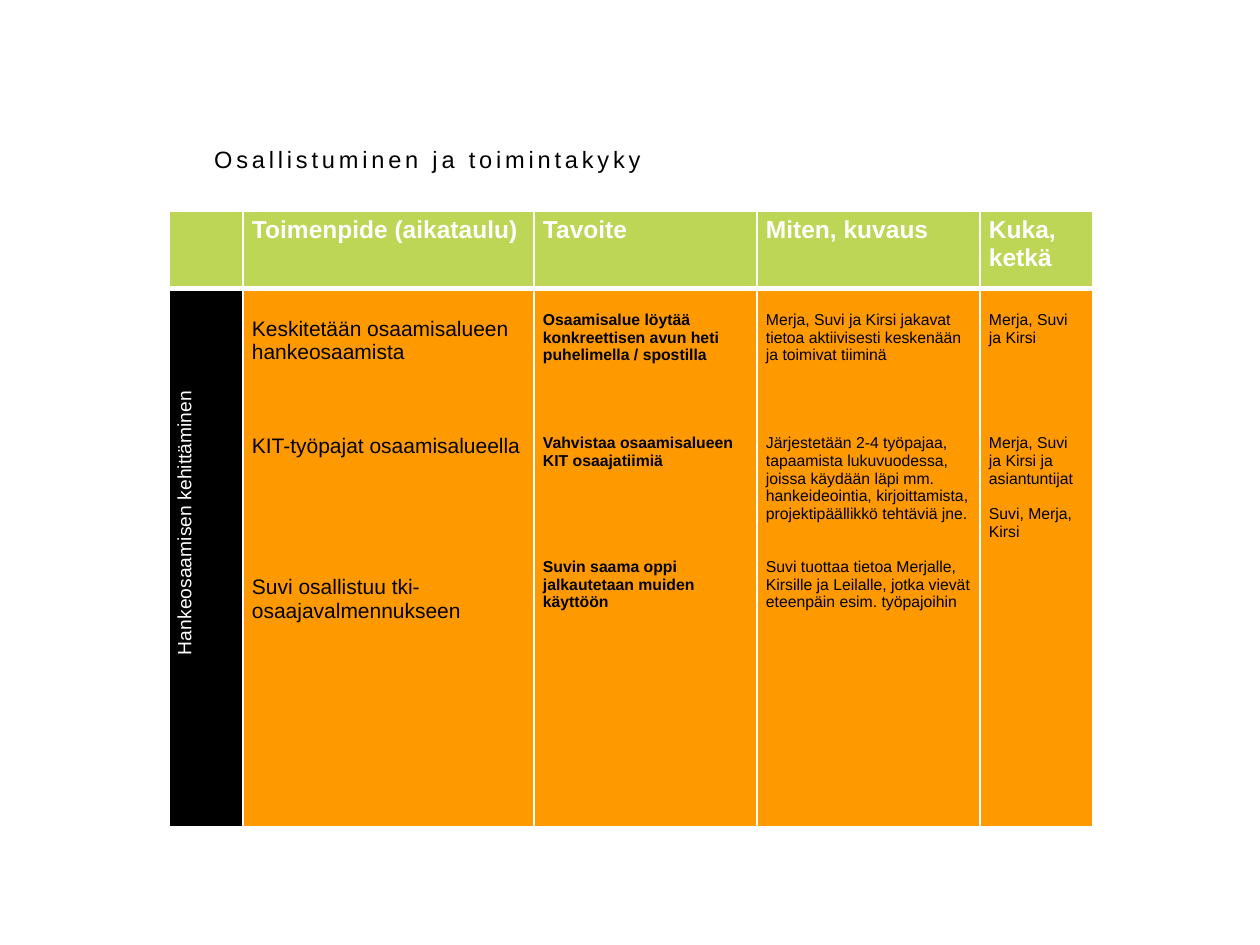
import pptx
import pptx.util
import pptx.dml.color
import pptx.enum.text
import pptx.oxml
import pptx.oxml.ns
import lxml.etree

Inches = pptx.util.Inches
Pt = pptx.util.Pt
tint = {"head": "BED656", "side": "000000", "body": "FF9900",
        "white": "FFFFFF", "black": "000000"}


def style(para, size, name, bold=False):
    font = para.font
    font.size = Pt(size)
    font.name = "Arial"
    font.bold = bold
    font.color.rgb = pptx.dml.color.RGBColor.from_string(tint[name])


def dress(cell, name, edges):
    props = cell._tc.get_or_add_tcPr()
    for side, width in zip("LRTB", edges):
        line = lxml.etree.SubElement(props, pptx.oxml.ns.qn(f"a:ln{side}"), w=str(Pt(width)))
        fill = lxml.etree.SubElement(line, pptx.oxml.ns.qn("a:solidFill"))
        lxml.etree.SubElement(fill, pptx.oxml.ns.qn("a:srgbClr"), val=tint["white"])
    cell.fill.solid()
    cell.fill.fore_color.rgb = pptx.dml.color.RGBColor.from_string(tint[name])
    cell.margin_left = cell.margin_right = Inches(0.07)
    cell.margin_top = cell.margin_bottom = Inches(0.04)


deck = pptx.Presentation()
deck.slide_width = Inches(10)
deck.slide_height = Inches(7.5)
slide = deck.slides.add_slide(deck.slide_layouts[6])

widths = [0.59, 2.31, 1.77, 1.77, 0.89]
grid = slide.shapes.add_table(2, len(widths), Inches(1.34), Inches(1.68),
                              Inches(7.32), Inches(4.88)).table
grid.first_row = False
grid.horz_banding = False
for col, width in zip(grid.columns, widths):
    col.width = Inches(width)
for row, height in zip(grid.rows, [0.61, 4.27]):
    row.height = Inches(height)

heads = ["", "Toimenpide (aikataulu)", "Tavoite", "Miten, kuvaus", "Kuka, ketkä"]
for col, text in enumerate(heads):
    cell = grid.cell(0, col)
    dress(cell, "head", [1, 1, 1, 3])
    cell.text = text
    style(cell.text_frame.paragraphs[0], 14, "white", True)

side = grid.cell(1, 0)
dress(side, "side", [1, 1, 3, 1])
side._tc.tcPr.set("vert", "vert270")
side.text = "Hankeosaamisen kehittäminen"
para = side.text_frame.paragraphs[0]
para.alignment = pptx.enum.text.PP_ALIGN.CENTER
para._p.get_or_add_pPr().set("marL", str(Inches(0.55)))
style(para, 11, "white")

plans = [
    (12, False, [(0, "Keskitetään osaamisalueen hankeosaamista"),
                 (3, "KIT-työpajat osaamisalueella"),
                 (5, "Suvi osallistuu tki-osaajavalmennukseen")]),
    (9, True, [(0, "Osaamisalue löytää konkreettisen avun heti puhelimella / spostilla"),
               (4, "Vahvistaa osaamisalueen KIT osaajatiimiä"),
               (5, "Suvin saama oppi jalkautetaan muiden käyttöön")]),
    (9, False, [(0, "Merja, Suvi ja Kirsi jakavat tietoa aktiivisesti keskenään ja toimivat tiiminä"),
                (4, "Järjestetään 2-4 työpajaa, tapaamista lukuvuodessa, joissa käydään läpi mm. "
                    "hankeideointia, kirjoittamista, projektipäällikkö tehtäviä jne."),
                (2, "Suvi tuottaa tietoa Merjalle, Kirsille ja Leilalle, jotka vievät eteenpäin "
                    "esim. työpajoihin")]),
    (9, False, [(0, "Merja, Suvi ja Kirsi"),
                (5, "Merja, Suvi ja Kirsi ja asiantuntijat"),
                (1, "Suvi, Merja, Kirsi")]),
]
for col, (size, bold, items) in enumerate(plans, 1):
    cell = grid.cell(1, col)
    dress(cell, "body", [1, 1, 3, 1])
    lead = size * 1.12
    cell.margin_top = Inches(0.04) + Pt(lead)
    cell.text = "\n".join(text for gap, text in items)
    for para, (gap, text) in zip(cell.text_frame.paragraphs, items):
        style(para, size, "black", bold)
        para.space_before = Pt(round(gap * lead, 1))

title = slide.shapes.add_textbox(Inches(1.63), Inches(1.15), Inches(6.75), Inches(0.22))
frame = title.text_frame
frame.word_wrap = True
frame.vertical_anchor = pptx.enum.text.MSO_ANCHOR.MIDDLE
frame.margin_left = frame.margin_right = Inches(0.07)
frame.margin_top = frame.margin_bottom = Inches(0.04)
para = frame.paragraphs[0]
run = para.add_run()
run.text = "Osallistuminen ja toimintakyky"
run._r.get_or_add_rPr().set("spc", "220")
style(para, 13.5, "black")

deck.save("out.pptx")
